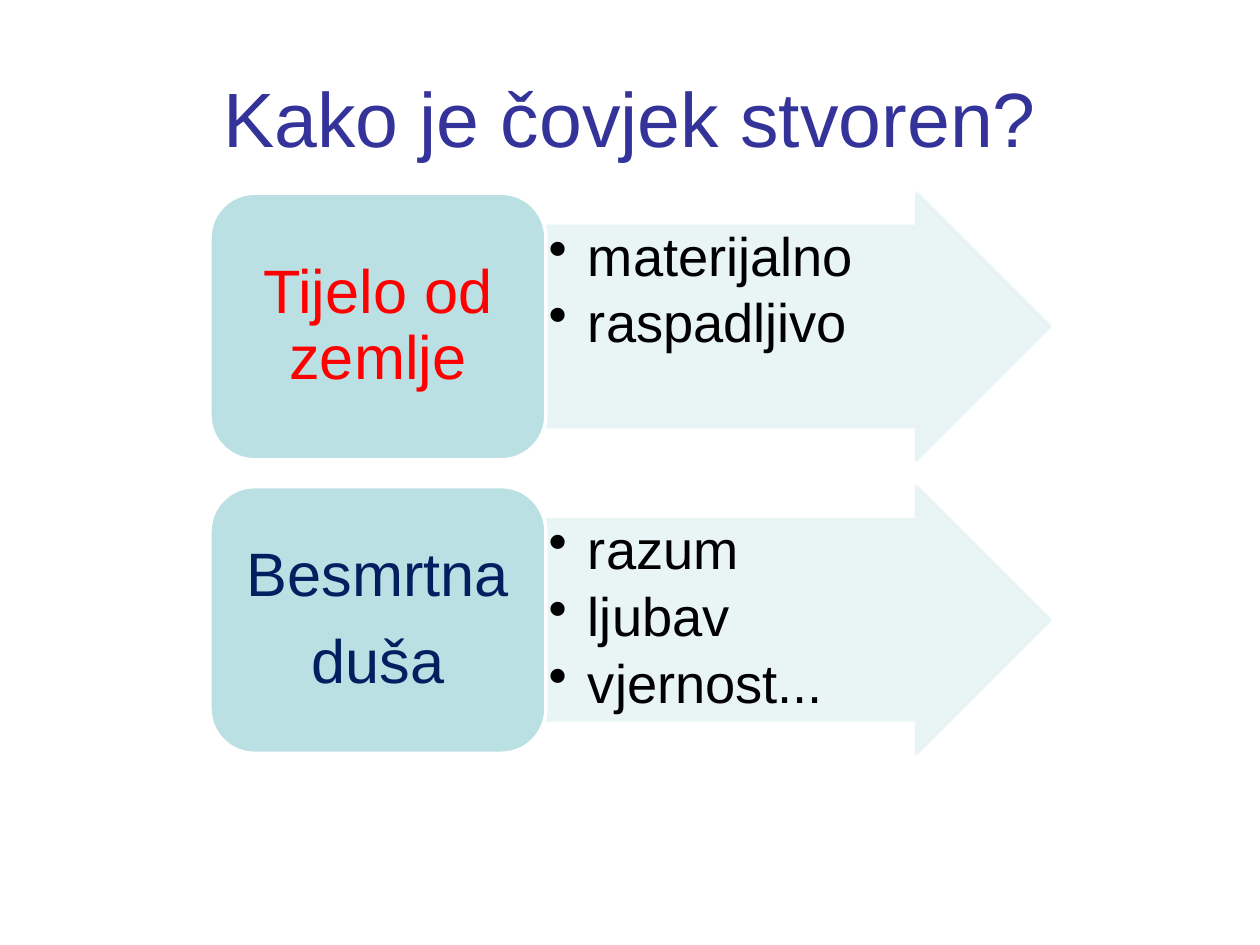
from dataclasses import dataclass

from lxml import etree
from pptx import Presentation
from pptx.dml import color
from pptx.enum import shapes, text
from pptx.oxml import ns
from pptx.util import Pt

FONT = "Arial"
CARD_LEFT, CARD_WIDTH = 120, 192
ARROW_LEFT, ARROW_WIDTH = CARD_LEFT + CARD_WIDTH, 288
ROW_TOP, ROW_HEIGHT, ROW_PITCH = 110.4, 152.4, 167.7
BULLET_INDENT = 22.5


@dataclass
class Aspect:
    heading: list[str]
    heading_color: str
    traits: list[str]


@dataclass
class BlockStyle:
    geometry: shapes.MSO_SHAPE
    left: float
    width: float
    fill: str
    line: str
    frame: dict
    paragraph: dict
    size: float
    opacity: int = 100
    adjustments: tuple[float, ...] = ()
    bulleted: bool = False


CARD = BlockStyle(
    shapes.MSO_SHAPE.ROUNDED_RECTANGLE, CARD_LEFT, CARD_WIDTH, "BBE0E3", "FFFFFF",
    frame=dict(word_wrap=True, vertical_anchor=text.MSO_ANCHOR.MIDDLE,
               margin_left=Pt(10.5), margin_right=Pt(10.5),
               margin_top=Pt(5.25), margin_bottom=Pt(5.25)),
    paragraph=dict(alignment=text.PP_ALIGN.CENTER, line_spacing=0.9, space_after=Pt(12.25)),
    size=35,
)
ARROW = BlockStyle(
    shapes.MSO_SHAPE.RIGHT_ARROW, ARROW_LEFT, ARROW_WIDTH, "E7F3F4", "E7F3F4",
    frame=dict(word_wrap=True, vertical_anchor=text.MSO_ANCHOR.TOP,
               margin_left=Pt(1.5), margin_right=Pt(1.5),
               margin_top=Pt(1.5), margin_bottom=Pt(1.5)),
    paragraph=dict(alignment=text.PP_ALIGN.LEFT, level=1, line_spacing=0.9,
                   space_after=Pt(4.65)),
    size=31, opacity=90, adjustments=(0.75, 0.5), bulleted=True,
)
ASPECTS = [
    Aspect(["Tijelo od zemlje"], "FF0000", ["materijalno", "raspadljivo"]),
    Aspect(["Besmrtna", "duša"], "002060", ["razum", "ljubav", "vjernost..."]),
]


def apply_format(target, values: dict) -> None:
    for attribute, value in values.items():
        setattr(target, attribute, value)


def set_color(color_format, hex_value: str) -> None:
    color_format.rgb = color.RGBColor.from_string(hex_value)


def format_font(font, size: float, hex_value: str) -> None:
    apply_format(font, dict(name=FONT, size=Pt(size)))
    set_color(font.color, hex_value)


def add_bullet(paragraph) -> None:
    properties = paragraph._p.get_or_add_pPr()
    indent = int(Pt(BULLET_INDENT))
    properties.set("marL", str(indent))
    properties.set("indent", str(-indent))
    etree.SubElement(properties, ns.qn("a:buChar")).set("char", "•")


def add_block(slide, style: BlockStyle, top: float, lines: list[str], text_color: str) -> None:
    block = slide.shapes.add_shape(
        style.geometry, Pt(style.left), Pt(top), Pt(style.width), Pt(ROW_HEIGHT))
    block.shadow.inherit = False
    for index, adjustment in enumerate(style.adjustments):
        block.adjustments[index] = adjustment
    block.fill.solid()
    set_color(block.fill.fore_color, style.fill)
    set_color(block.line.color, style.line)
    block.line.width = Pt(2)
    if style.opacity < 100:
        for tint in block._element.spPr.iter(ns.qn("a:srgbClr")):
            etree.SubElement(tint, ns.qn("a:alpha")).set("val", str(style.opacity * 1000))

    frame = block.text_frame
    apply_format(frame, style.frame)
    for index, line in enumerate(lines):
        paragraph = frame.add_paragraph() if index else frame.paragraphs[0]
        apply_format(paragraph, style.paragraph)
        run = paragraph.add_run()
        run.text = line
        format_font(run.font, style.size, text_color)
        if style.bulleted:
            add_bullet(paragraph)


def add_title(slide, wording: str) -> None:
    title = slide.shapes.title
    apply_format(title, dict(left=Pt(36), top=Pt(21.6), width=Pt(648), height=Pt(90)))
    title.text_frame.text = wording
    title.text_frame.vertical_anchor = text.MSO_ANCHOR.MIDDLE
    paragraph = title.text_frame.paragraphs[0]
    paragraph.alignment = text.PP_ALIGN.CENTER
    format_font(paragraph.runs[0].font, 44, "333399")


def main() -> None:
    presentation = Presentation()
    apply_format(presentation, dict(slide_width=Pt(720), slide_height=Pt(540)))
    slide = presentation.slides.add_slide(presentation.slide_layouts[5])
    add_title(slide, "Kako je čovjek stvoren?")
    for row, aspect in enumerate(ASPECTS):
        top = ROW_TOP + row * ROW_PITCH
        add_block(slide, ARROW, top, aspect.traits, "000000")
        add_block(slide, CARD, top, aspect.heading, aspect.heading_color)
    presentation.save("out.pptx")


if __name__ == "__main__":
    main()
